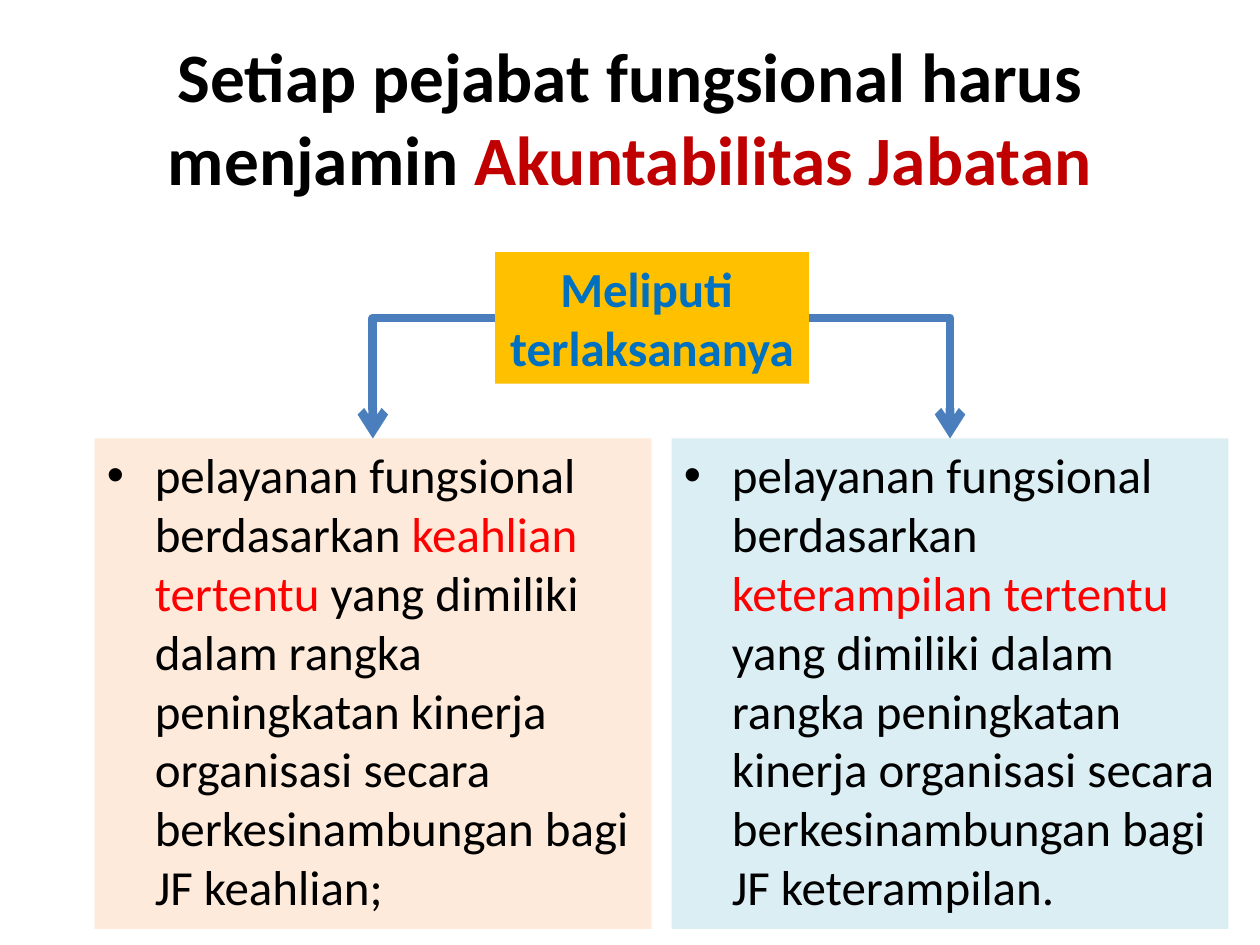
from lxml import etree
from pptx import Presentation
from pptx.dml.color import RGBColor
from pptx.enum.shapes import MSO_CONNECTOR, MSO_SHAPE
from pptx.enum.text import MSO_ANCHOR, PP_ALIGN
from pptx.oxml.ns import qn
from pptx.util import Inches, Pt

RECTANGLE, ELBOW = MSO_SHAPE.RECTANGLE, MSO_CONNECTOR.ELBOW
TOP, MIDDLE = MSO_ANCHOR.TOP, MSO_ANCHOR.MIDDLE
LEFT, CENTER = PP_ALIGN.LEFT, PP_ALIGN.CENTER

WIDTH, HEIGHT = Inches(10), Inches(7.5)
COLORS = {
    "black": "000000", "dark red": "C00000", "red": "FF0000", "blue": "0070C0",
    "amber": "FFC000", "peach": "FDEADA", "ice": "DBEEF4", "arrow": "4B7EBC",
}
TITLE_FONT = {"name": "Calibri", "size": Pt(39.6), "bold": True}
LABEL_FONT = {"name": "Calibri", "size": Pt(28), "bold": True}
BODY_FONT = {"name": "Calibri", "size": Pt(28), "bold": False}

TITLE_BOX = (0.05, 0.04, 0.9, 1 / 6)
LABEL_BOX = (0.393, 0.267, 0.249, 0.139)
PANEL_LEFT, PANEL_TOP, PANEL_WIDTH, PANEL_HEIGHT = 0.075, 0.464, 0.442, 0.519
PANEL_STEP = 0.458
PANELS = [
    ("peach", "keahlian", ";"),
    ("ice", "keterampilan", "."),
]


def rgb(name):
    """Return the named colour."""
    return RGBColor.from_string(COLORS[name])


def scale(box):
    """Turn shares of the slide into lengths."""
    left, top, width, height = box
    return (round(left * WIDTH), round(top * HEIGHT),
            round(width * WIDTH), round(height * HEIGHT))


def write(paragraph, runs, font, alignment):
    """Fill a paragraph with coloured runs of one font."""
    paragraph.alignment = alignment
    for text, color in runs:
        run = paragraph.add_run()
        run.text = text
        for attribute, value in font.items():
            setattr(run.font, attribute, value)
        run.font.color.rgb = rgb(color)


def add_filled_box(slide, box, color, anchor, wrap=True):
    """Add a plain filled rectangle and return its text frame."""
    shape = slide.shapes.add_shape(RECTANGLE, *scale(box))
    shape.shadow.inherit = False
    shape.fill.solid()
    shape.fill.fore_color.rgb = rgb(color)
    shape.line.fill.background()
    frame = shape.text_frame
    frame.word_wrap = wrap
    frame.vertical_anchor = anchor
    return frame


def add_title(slide, box):
    """Add the two-coloured headline."""
    frame = slide.shapes.add_textbox(*scale(box)).text_frame
    frame.word_wrap = True
    frame.vertical_anchor = MIDDLE
    runs = [("Setiap pejabat fungsional harus menjamin ", "black"),
            ("Akuntabilitas Jabatan", "dark red")]
    write(frame.paragraphs[0], runs, TITLE_FONT, CENTER)


def add_label(slide, box):
    """Add the label from which both arrows start."""
    frame = add_filled_box(slide, box, "amber", TOP, wrap=False)
    write(frame.paragraphs[0], [("Meliputi ", "blue")], LABEL_FONT, CENTER)
    write(frame.add_paragraph(), [("terlaksananya", "blue")], LABEL_FONT, CENTER)


def add_panel(slide, box, color, skill, ending):
    """Add a bulleted panel about one kind of position."""
    paragraph = add_filled_box(slide, box, color, TOP).paragraphs[0]
    runs = [
        ("pelayanan fungsional berdasarkan ", "black"),
        (f"{skill} tertentu", "red"),
        (" yang dimiliki dalam rangka peningkatan kinerja organisasi secara "
         f"berkesinambungan bagi JF {skill}{ending}", "black"),
    ]
    write(paragraph, runs, BODY_FONT, LEFT)
    properties = paragraph._p.get_or_add_pPr()
    indent = Inches(0.38)
    properties.set("marL", str(indent))
    properties.set("indent", str(-indent))
    etree.SubElement(properties, qn("a:buFont"), typeface="Arial")
    etree.SubElement(properties, qn("a:buChar"), char="•")


def add_bent_arrow(slide, start, end):
    """Add an arrow that runs sideways and then down."""
    points = [round(share * length) for share, length
              in zip(start + end, (WIDTH, HEIGHT) * 2)]
    connector = slide.shapes.add_connector(ELBOW, *points)
    connector.line.color.rgb = rgb("arrow")
    connector.line.width = Pt(5)
    properties = connector._element.spPr
    properties.find(qn("a:prstGeom")).set("prst", "bentConnector2")
    etree.SubElement(properties.find(qn("a:ln")), qn("a:tailEnd"), type="arrow")
    etree.SubElement(properties, qn("a:effectLst"))


def main():
    """Build and save the slide."""
    presentation = Presentation()
    presentation.slide_width, presentation.slide_height = WIDTH, HEIGHT
    slide = presentation.slides.add_slide(presentation.slide_layouts[6])
    add_title(slide, TITLE_BOX)
    add_label(slide, LABEL_BOX)
    label_left, label_top, label_width, label_height = LABEL_BOX
    label_sides = (label_left, label_left + label_width)
    for index, (panel, side) in enumerate(zip(PANELS, label_sides)):
        left = PANEL_LEFT + index * PANEL_STEP
        add_panel(slide, (left, PANEL_TOP, PANEL_WIDTH, PANEL_HEIGHT), *panel)
        add_bent_arrow(slide, (side, label_top + label_height / 2),
                       (left + PANEL_WIDTH / 2, PANEL_TOP))
    presentation.save("out.pptx")


if __name__ == "__main__":
    main()
